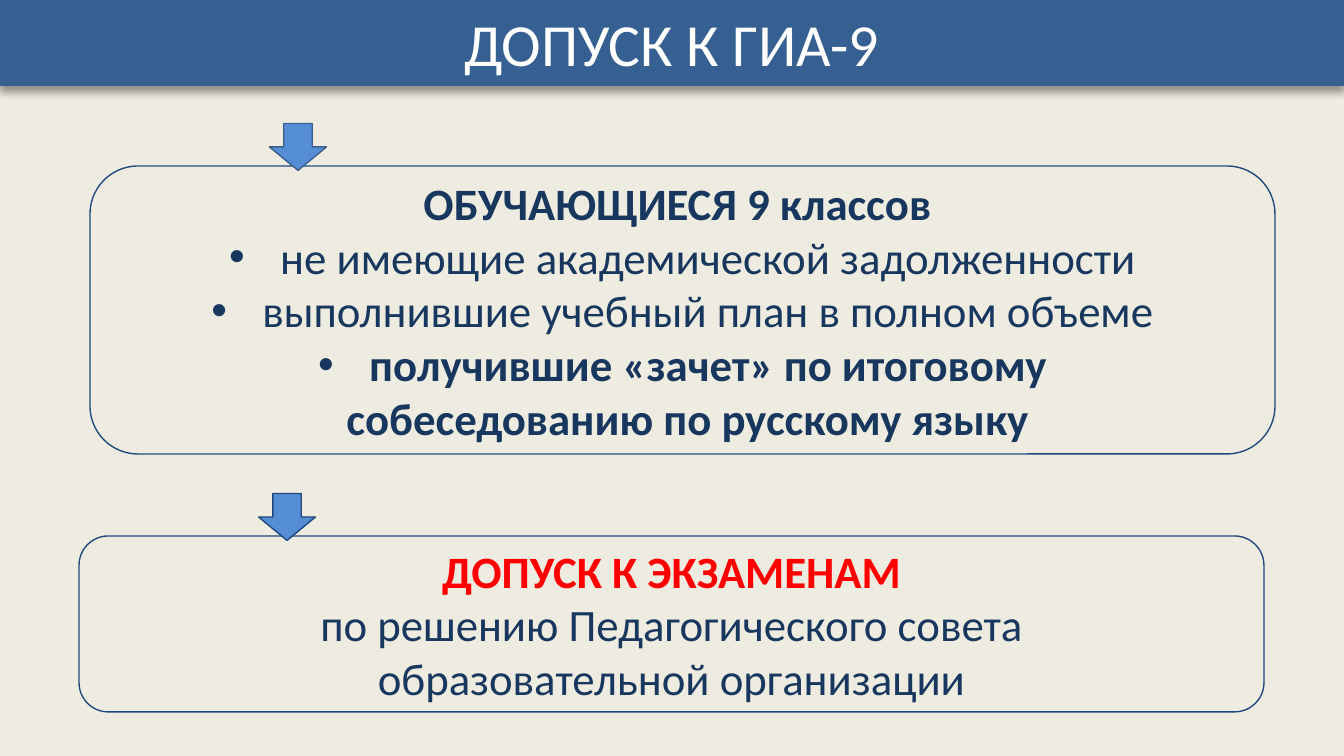
import pptx
import pptx.dml.color
import pptx.enum.shapes
import pptx.enum.text
import pptx.oxml
import pptx.oxml.ns
import pptx.util

PX = 914400 / 134.4
SHAPES = pptx.enum.shapes.MSO_SHAPE
COLORS = {
    "page": "EEECE1", "banner": "376092", "white": "FFFFFF", "text": "17375E",
    "accent": "FF0000", "outline": "1F497D", "arrow": "558ED5", "arrow_edge": "3A5F8C",
}


def px(length):
    return pptx.util.Emu(round(length * PX))


def rgb(name):
    return pptx.dml.color.RGBColor.from_string(COLORS[name])


def add_box(page, kind, left, top, width, height, fill=None, line=None):
    box = page.shapes.add_shape(kind, px(left), px(top), px(width), px(height))
    box.shadow.inherit = False
    if fill:
        box.fill.solid()
        box.fill.fore_color.rgb = rgb(fill)
    else:
        box.fill.background()
    if line:
        box.line.color.rgb = rgb(line)
        box.line.width = pptx.util.Pt(0.75)
    else:
        box.line.fill.background()
    return box


def add_bullet(para):
    indent = px(51)
    properties = para._p.get_or_add_pPr()
    properties.set("marL", str(indent))
    properties.set("indent", str(-indent))
    for tag, key, value in (("buFont", "typeface", "Arial"), ("buChar", "char", "•")):
        mark = properties.makeelement(pptx.oxml.ns.qn("a:" + tag), {key: value})
        properties.append(mark)


def write_lines(box, lines, size):
    """Each line is (text, colour, bold, bullet)."""
    frame = box.text_frame
    frame.word_wrap = True
    frame.vertical_anchor = pptx.enum.text.MSO_ANCHOR.MIDDLE
    for index, (text, color, bold, bullet) in enumerate(lines):
        para = frame.add_paragraph() if index else frame.paragraphs[0]
        para.text = text
        para.alignment = pptx.enum.text.PP_ALIGN.CENTER
        if bullet:
            add_bullet(para)
        for span in para.runs:
            span.font.name = "Calibri"
            span.font.size = pptx.util.Pt(size)
            span.font.bold = bold
            span.font.color.rgb = rgb(color)


def add_banner(page, left, top, width, height, title):
    box = add_box(page, SHAPES.RECTANGLE, left, top, width, height, fill="banner")
    write_lines(box, [(title, "white", False, False)], 32)
    # Soft shadow straight below the banner
    effects = box._element.spPr.find(pptx.oxml.ns.qn("a:effectLst"))
    effects.append(pptx.oxml.parse_xml(
        f'<a:outerShdw {pptx.oxml.ns.nsdecls("a")} blurRad="50800" dist="38100" '
        'dir="5400000" rotWithShape="0"><a:srgbClr val="000000">'
        '<a:alpha val="40000"/></a:srgbClr></a:outerShdw>'))


def add_step(page, left, top, width, height, lines):
    box = add_box(page, SHAPES.ROUNDED_RECTANGLE, left, top, width, height, line="outline")
    write_lines(box, lines, 24)


def add_step_arrow(page, left, top, edge):
    """Downward arrow on the top edge of the step at left, top."""
    length, breadth = 47, 57
    center_x, center_y = left + 208, top - 19
    arrow = add_box(page, SHAPES.RIGHT_ARROW, center_x - length / 2, center_y - breadth / 2,
                    length, breadth, fill="arrow", line=edge)
    arrow.rotation = 90


def main():
    deck = pptx.Presentation()
    deck.slide_width, deck.slide_height = px(1344), px(756)
    page = deck.slides.add_slide(deck.slide_layouts[6])
    page.background.fill.solid()
    page.background.fill.fore_color.rgb = rgb("page")

    # Title
    add_banner(page, 0, 0, 1344, 86, "ДОПУСК К ГИА-9")

    # Who is admitted, then the decision
    add_step(page, 90, 166, 1185, 288, [
        ("ОБУЧАЮЩИЕСЯ 9 классов ", "text", True, False),
        ("не имеющие академической задолженности", "text", False, True),
        ("выполнившие учебный план в полном объеме", "text", False, True),
        ("получившие «зачет» по итоговому", "text", True, True),
        (" собеседованию по русскому языку", "text", True, False),
    ])
    add_step(page, 79, 536, 1185, 176, [
        ("ДОПУСК К ЭКЗАМЕНАМ", "accent", True, False),
        ("по решению Педагогического совета", "text", False, False),
        ("образовательной организации", "text", False, False),
    ])

    # Arrows leading into each step
    add_step_arrow(page, 90, 166, "arrow_edge")
    add_step_arrow(page, 79, 536, "outline")

    deck.save("out.pptx")


if __name__ == "__main__":
    main()
